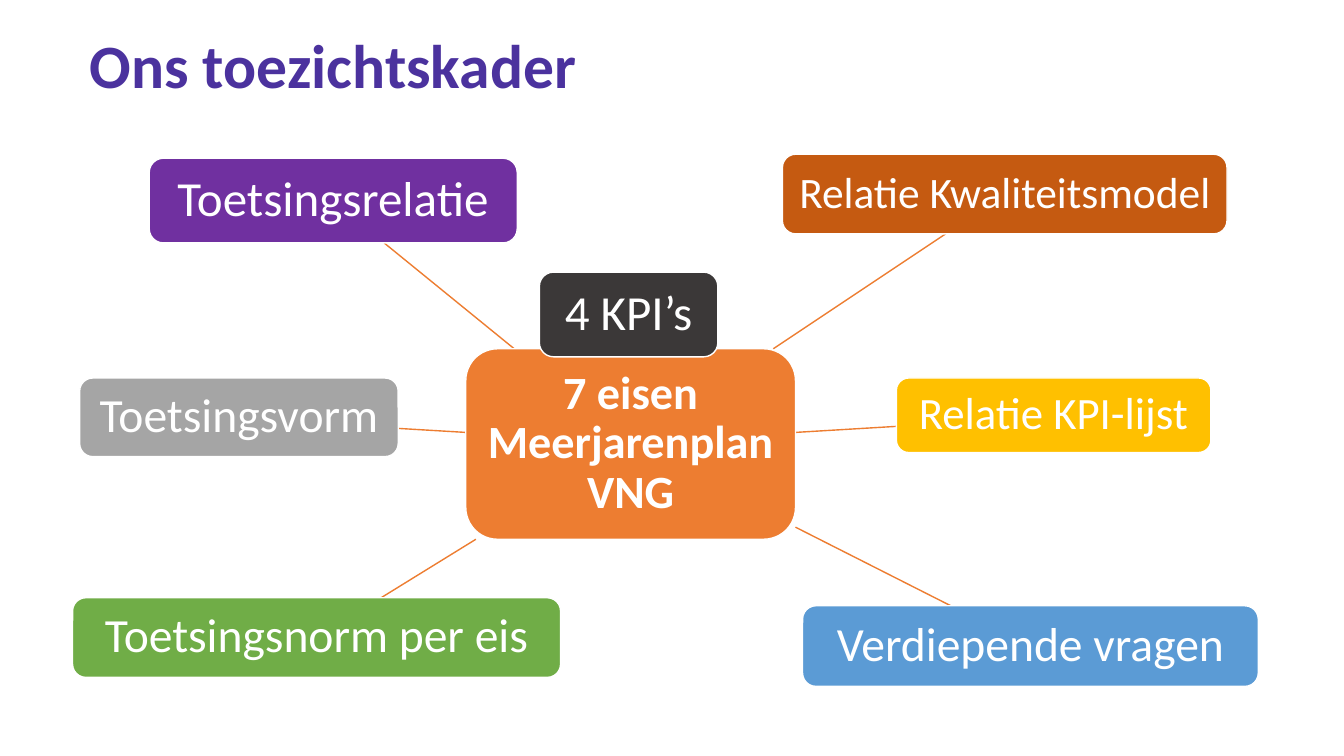
from dataclasses import dataclass

from lxml import etree
from pptx import Presentation
from pptx.dml.color import RGBColor
from pptx.enum import shapes as sh, text as tx
from pptx.oxml.ns import qn
from pptx.util import Inches, Pt

FONT = "Calibri"
COLORS = {
    "title": "4B329E", "white": "FFFFFF", "orange": "ED7D31",
    "dark": "3B3838", "yellow": "FFC000", "blue": "5B9BD5",
    "green": "70AD47", "rust": "C55A11", "gray": "A5A5A5",
    "purple": "7030A0",
}


@dataclass
class Box:
    label: str
    left: float
    top: float
    width: float
    height: float
    fill: str
    size: int
    bold: bool = False


@dataclass
class Link:
    x1: float
    y1: float
    x2: float
    y2: float


CORE = Box("7 eisen Meerjarenplan VNG", 4.62, 3.46, 3.27, 1.89, "orange", 33, True)
BOXES = [
    CORE,
    Box("4 KPI’s", 5.35, 2.7, 1.77, 0.84, "dark", 35),
    Box("Relatie KPI-lijst", 8.89, 3.75, 3.12, 0.74, "yellow", 32),
    Box("Verdiepende vragen", 7.96, 6.01, 4.52, 0.8, "blue", 34),
    Box("Toetsingsnorm per eis", 0.72, 5.93, 4.84, 0.79, "green", 34),
    Box("Relatie Kwaliteitsmodel", 7.76, 1.53, 4.41, 0.79, "rust", 31),
    Box("Toetsingsvorm", 0.79, 3.75, 3.16, 0.78, "gray", 34),
    Box("Toetsingsrelatie", 1.48, 1.57, 3.65, 0.84, "purple", 35),
]
RIGHT = CORE.left + CORE.width
BASE = CORE.top + CORE.height
LINKS = [
    Link(RIGHT, 4.29, 8.89, 4.23),
    Link(RIGHT, 5.23, 9.43, 6.01),
    Link(4.72, BASE, 3.78, 5.93),
    Link(7.67, CORE.top, 9.38, 2.32),
    Link(CORE.left, 4.29, 3.95, 4.25),
    Link(5.1, CORE.top, 3.81, 2.41),
]


def rgb(name: str) -> RGBColor:
    return RGBColor.from_string(COLORS[name])


def set_text(shape, label: str, size: int, color: str, bold: bool) -> None:
    frame = shape.text_frame
    frame.text = label
    frame.word_wrap = True
    frame.auto_size = tx.MSO_AUTO_SIZE.NONE
    frame.vertical_anchor = tx.MSO_ANCHOR.MIDDLE
    para = frame.paragraphs[0]
    para.line_spacing = 0.9
    font = para.runs[0].font
    font.name, font.size, font.bold = FONT, Pt(size), bold
    font.color.rgb = rgb(color)


def add_title(slide, label: str) -> None:
    title = slide.shapes.title
    title.left, title.top = Inches(0.79), Inches(-0.04)
    title.width, title.height = Inches(11.5), Inches(1.45)
    set_text(title, label, 44, "title", True)
    title.text_frame.paragraphs[0].alignment = tx.PP_ALIGN.LEFT


def add_link(slide, link: Link) -> None:
    line = slide.shapes.add_connector(
        sh.MSO_CONNECTOR.STRAIGHT, Inches(link.x1), Inches(link.y1),
        Inches(link.x2), Inches(link.y2))
    line.line.color.rgb = rgb("orange")
    line.line.width = Pt(1)
    etree.SubElement(line._element.spPr, qn("a:effectLst"))


def add_box(slide, box: Box) -> None:
    shape = slide.shapes.add_shape(
        sh.MSO_SHAPE.ROUNDED_RECTANGLE, Inches(box.left), Inches(box.top),
        Inches(box.width), Inches(box.height))
    shape.shadow.inherit = False
    shape.fill.solid()
    shape.fill.fore_color.rgb = rgb(box.fill)
    shape.line.color.rgb = rgb("white")
    shape.line.width = Pt(1)
    set_text(shape, box.label, box.size, "white", box.bold)
    frame = shape.text_frame
    frame.margin_left = frame.margin_right = Inches(0.09)
    frame.margin_top = frame.margin_bottom = Inches(0.09)
    frame.paragraphs[0].alignment = tx.PP_ALIGN.CENTER


def main() -> None:
    deck = Presentation()
    deck.slide_width, deck.slide_height = Inches(13.33), Inches(7.5)
    slide = deck.slides.add_slide(deck.slide_layouts[5])
    add_title(slide, "Ons toezichtskader")
    for link in LINKS:
        add_link(slide, link)
    for box in BOXES:
        add_box(slide, box)
    deck.save("out.pptx")


if __name__ == "__main__":
    main()
